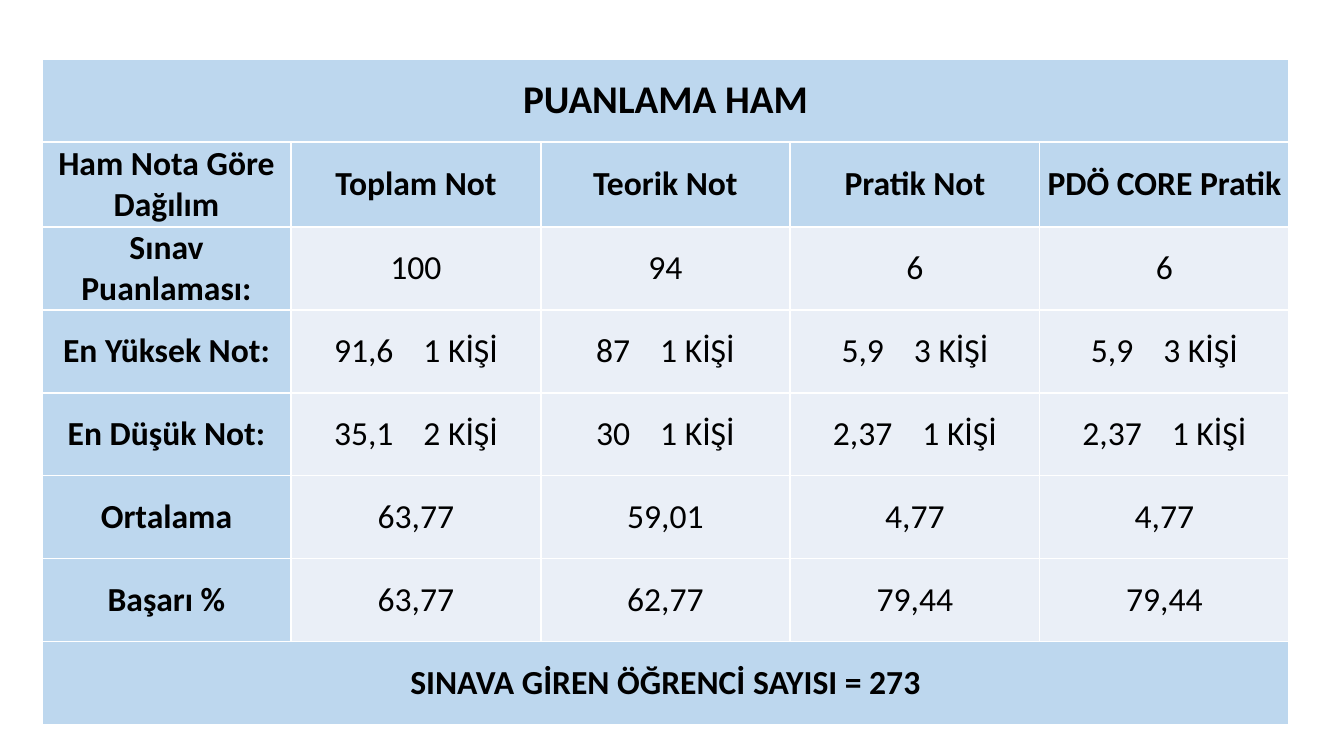
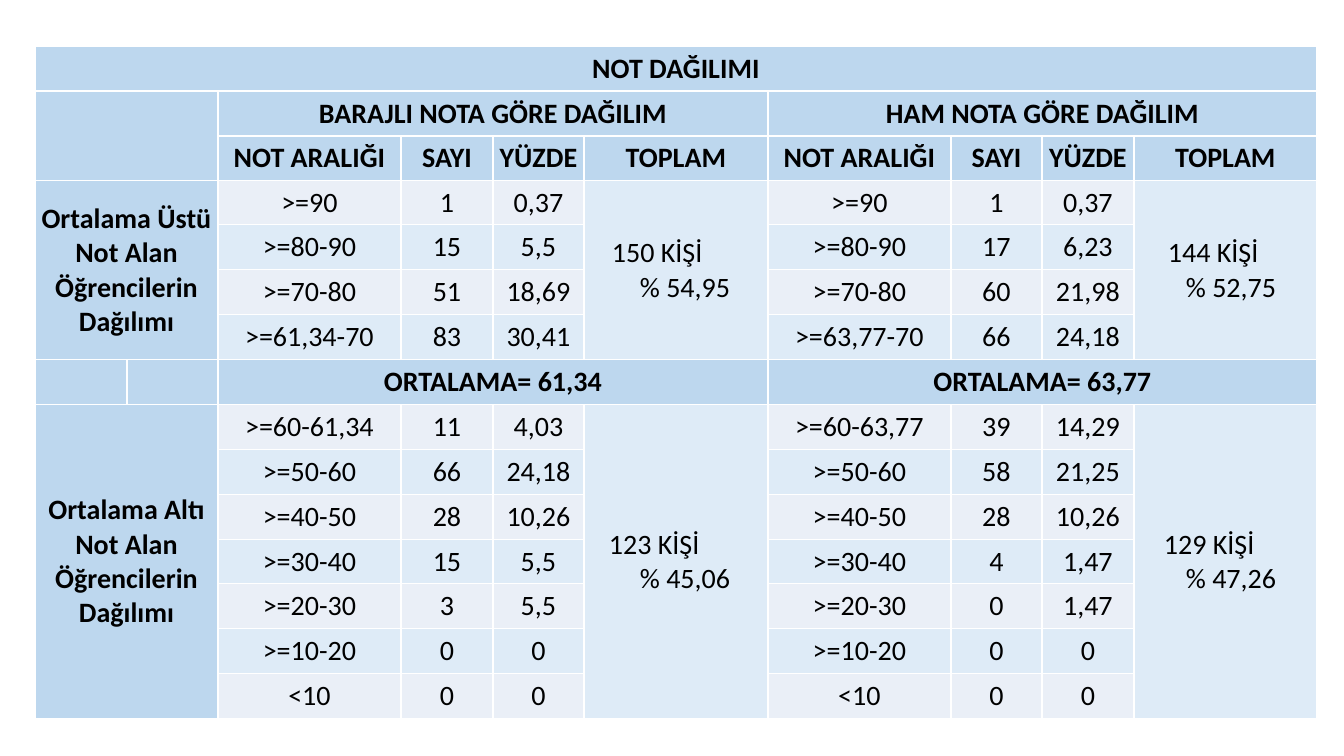
from dataclasses import dataclass
from itertools import accumulate, pairwise
from typing import NamedTuple

from lxml import etree
from pptx import Presentation
from pptx.dml.color import RGBColor
from pptx.enum.text import MSO_ANCHOR, PP_ALIGN
from pptx.oxml.ns import qn
from pptx.slide import Slide
from pptx.util import Emu, Pt

CENTER, LEFT, MIDDLE = PP_ALIGN.CENTER, PP_ALIGN.LEFT, MSO_ANCHOR.MIDDLE

EMU_PER_PX = 914400 / 100.8
SLIDE_WIDTH, SLIDE_HEIGHT = 1344, 756

HEADER_FILL = "BDD7EE"
LIGHT_FILL = "EAEFF7"
STRIPE_FILL = "DEEBF7"
BORDER_COLOR = "FFFFFF"
TEXT_COLOR = "000000"
FONT_NAME = "Calibri"
GAP_SPACING = 1600  # hundredths of a point, widens the space before a head count

CELL_FORMAT = {
    "vertical_anchor": MIDDLE,
    "margin_left": 0,
    "margin_top": 0,
    "margin_right": 0,
    "margin_bottom": 0,
}
TABLE_FORMAT = {"first_row": False, "horz_banding": False}


class Line(NamedTuple):
    """One paragraph; an indent makes it left-aligned, a tail follows a wide gap."""

    text: str
    indent: int | None = None
    tail: str = ""


@dataclass
class Cell:
    row: int
    column: int
    lines: tuple[Line, ...] = ()
    fill: str = HEADER_FILL
    rows: int = 1
    columns: int = 1
    bold: bool = True
    size: int | None = None


@dataclass
class Grid:
    left: int
    top: int
    widths: list[int]
    heights: list[int]
    text_size: int
    cells: list[Cell]


class Total(NamedTuple):
    people: str
    people_indent: int
    percent: str
    percent_indent: int


class Section(NamedTuple):
    """Grade ranges on one side of the average: (range, count, percent) rows."""

    first_row: int
    label: str
    distributions: tuple[list[tuple[str, str, str]], ...]
    totals: tuple[Total, ...]


SCORE_HEADINGS = ["Ham Nota Göre Dağılım", "Toplam Not", "Teorik Not", "Pratik Not", "PDÖ CORE Pratik"]
SCORE_ROWS = [
    ("Sınav Puanlaması:", [Line("100"), Line("94"), Line("6"), Line("6")]),
    ("En Yüksek Not:", [
        Line("91,6", tail="1 KİŞİ"), Line("87", tail="1 KİŞİ"),
        Line("5,9", tail="3 KİŞİ"), Line("5,9", tail="3 KİŞİ"),
    ]),
    ("En Düşük Not:", [
        Line("35,1", tail="2 KİŞİ"), Line("30", tail="1 KİŞİ"),
        Line("2,37", tail="1 KİŞİ"), Line("2,37", tail="1 KİŞİ"),
    ]),
    ("Ortalama", [Line("63,77"), Line("59,01"), Line("4,77"), Line("4,77")]),
    ("Başarı %", [Line("63,77"), Line("62,77"), Line("79,44"), Line("79,44")]),
]

GROUP_COLUMNS = (2, 6)
GROUP_TITLES = ("BARAJLI NOTA GÖRE DAĞILIM", "HAM NOTA GÖRE DAĞILIM")
GROUP_AVERAGES = ("ORTALAMA= 61,34", "ORTALAMA= 63,77")
GROUP_HEADINGS = ("NOT ARALIĞI", "SAYI", "YÜZDE", "TOPLAM")
AVERAGE_ROW = 7
SECTIONS = [
    Section(
        3,
        "Ortalama Üstü Not Alan Öğrencilerin Dağılımı",
        (
            [(">=90", "1", "0,37"), (">=80-90", "15", "5,5"),
             (">=70-80", "51", "18,69"), (">=61,34-70", "83", "30,41")],
            [(">=90", "1", "0,37"), (">=80-90", "17", "6,23"),
             (">=70-80", "60", "21,98"), (">=63,77-70", "66", "24,18")],
        ),
        (Total("150 KİŞİ", 28, "% 54,95", 56), Total("144 KİŞİ", 34, "% 52,75", 52)),
    ),
    Section(
        AVERAGE_ROW + 1,
        "Ortalama Altı Not Alan Öğrencilerin Dağılımı",
        (
            [(">=60-61,34", "11", "4,03"), (">=50-60", "66", "24,18"),
             (">=40-50", "28", "10,26"), (">=30-40", "15", "5,5"),
             (">=20-30", "3", "5,5"), (">=10-20", "0", "0"), ("<10", "0", "0")],
            [(">=60-63,77", "39", "14,29"), (">=50-60", "58", "21,25"),
             (">=40-50", "28", "10,26"), (">=30-40", "4", "1,47"),
             (">=20-30", "0", "1,47"), (">=10-20", "0", "0"), ("<10", "0", "0")],
        ),
        (Total("123 KİŞİ", 25, "% 45,06", 56), Total("129 KİŞİ", 30, "% 47,26", 52)),
    ),
]


def px(length: int) -> Emu:
    return Emu(round(length * EMU_PER_PX))


def color(value: str) -> RGBColor:
    return RGBColor.from_string(value)


def apply_format(target: object, values: dict) -> None:
    for name, value in values.items():
        setattr(target, name, value)


def split_length(total: int, weights: list[int]) -> list[int]:
    """Share a length by weight in whole px without accumulating rounding errors."""
    edges = [round(total * part / sum(weights)) for part in accumulate(weights, initial=0)]
    return [end - start for start, end in pairwise(edges)]


def add_borders(table_cell) -> None:
    properties = table_cell._tc.get_or_add_tcPr()
    for side in ("a:lnL", "a:lnR", "a:lnT", "a:lnB"):
        border = etree.SubElement(properties, qn(side), w=str(Pt(1)))
        fill = etree.SubElement(border, qn("a:solidFill"))
        etree.SubElement(fill, qn("a:srgbClr"), val=BORDER_COLOR)


def write_line(paragraph, line: Line, size: int, bold: bool) -> None:
    paragraph.alignment = CENTER if line.indent is None else LEFT
    if line.indent is not None:
        paragraph._p.get_or_add_pPr().set("marL", str(px(line.indent)))
    font_format = {"name": FONT_NAME, "size": Pt(size), "bold": bold}
    for text in (line.text, " ", line.tail) if line.tail else (line.text,):
        run = paragraph.add_run()
        run.text = text
        apply_format(run.font, font_format)
        run.font.color.rgb = color(TEXT_COLOR)
        if text == " ":
            run._r.get_or_add_rPr().set("spc", str(GAP_SPACING))


def draw_cell(table, cell: Cell, text_size: int) -> None:
    table_cell = table.cell(cell.row, cell.column)
    if cell.rows > 1 or cell.columns > 1:
        table_cell.merge(table.cell(cell.row + cell.rows - 1, cell.column + cell.columns - 1))
    table_cell.fill.solid()
    table_cell.fill.fore_color.rgb = color(cell.fill)
    frame = table_cell.text_frame
    for index, line in enumerate(cell.lines):
        paragraph = frame.add_paragraph() if index else frame.paragraphs[0]
        write_line(paragraph, line, cell.size or text_size, cell.bold)


def draw_grid(slide: Slide, grid: Grid) -> None:
    table = slide.shapes.add_table(
        len(grid.heights), len(grid.widths), px(grid.left), px(grid.top),
        px(sum(grid.widths)), px(sum(grid.heights)),
    ).table
    apply_format(table, TABLE_FORMAT)
    for column, width in zip(table.columns, grid.widths):
        column.width = px(width)
    for row, height in zip(table.rows, grid.heights):
        row.height = px(height)
    for table_cell in table.iter_cells():
        apply_format(table_cell, CELL_FORMAT)
        add_borders(table_cell)
    for cell in grid.cells:
        draw_cell(table, cell, grid.text_size)


def score_grid() -> Grid:
    column_count = len(SCORE_HEADINGS)
    cells = [Cell(0, 0, (Line("PUANLAMA HAM"),), columns=column_count, size=28)]
    cells += [Cell(1, column, (Line(text),)) for column, text in enumerate(SCORE_HEADINGS)]
    for row, (label, scores) in enumerate(SCORE_ROWS, start=2):
        cells.append(Cell(row, 0, (Line(label),)))
        cells += [
            Cell(row, column, (score,), LIGHT_FILL, bold=False)
            for column, score in enumerate(scores, start=1)
        ]
    last_row = len(SCORE_ROWS) + 2
    cells.append(Cell(last_row, 0, (Line("SINAVA GİREN ÖĞRENCİ SAYISI = 273"),), columns=column_count))
    heights = [83, 85] + [83] * (last_row - 1)
    return Grid(42, 59, split_length(1247, [1] * column_count), heights, 24, cells)


def section_cells(section: Section) -> list[Cell]:
    row_count = len(section.distributions[0])
    cells = [Cell(section.first_row, 0, (Line(section.label),), rows=row_count, columns=2)]
    for first_column, distribution, total in zip(GROUP_COLUMNS, section.distributions, section.totals):
        for index, values in enumerate(distribution):
            fill = STRIPE_FILL if index % 2 else LIGHT_FILL
            cells += [
                Cell(section.first_row + index, column, (Line(value),), fill, bold=False)
                for column, value in enumerate(values, start=first_column)
            ]
        total_lines = (
            Line(total.people, total.people_indent),
            Line(total.percent, total.percent_indent),
        )
        cells.append(Cell(section.first_row, first_column + 3, total_lines, STRIPE_FILL,
                          rows=row_count, bold=False))
    return cells


def distribution_grid() -> Grid:
    weights = [1, 1] + [2, 1, 1, 2] * len(GROUP_COLUMNS)
    cells = [
        Cell(0, 0, (Line("NOT DAĞILIMI"),), columns=len(weights)),
        Cell(1, 0, rows=2, columns=2),
        Cell(AVERAGE_ROW, 0),
        Cell(AVERAGE_ROW, 1),
    ]
    for first_column, title, average in zip(GROUP_COLUMNS, GROUP_TITLES, GROUP_AVERAGES):
        cells += [
            Cell(row, first_column, (Line(text),), columns=len(GROUP_HEADINGS))
            for row, text in ((1, title), (AVERAGE_ROW, average))
        ]
        cells += [
            Cell(2, column, (Line(heading),))
            for column, heading in enumerate(GROUP_HEADINGS, start=first_column)
        ]
    for section in SECTIONS:
        cells += section_cells(section)
    return Grid(35, 46, split_length(1282, weights), split_length(673, [1] * 15), 20, cells)


def main() -> None:
    presentation = Presentation()
    presentation.slide_width = px(SLIDE_WIDTH)
    presentation.slide_height = px(SLIDE_HEIGHT)
    blank_layout = presentation.slide_layouts[6]
    for grid in (score_grid(), distribution_grid()):
        draw_grid(presentation.slides.add_slide(blank_layout), grid)
    presentation.save("out.pptx")


if __name__ == "__main__":
    main()
